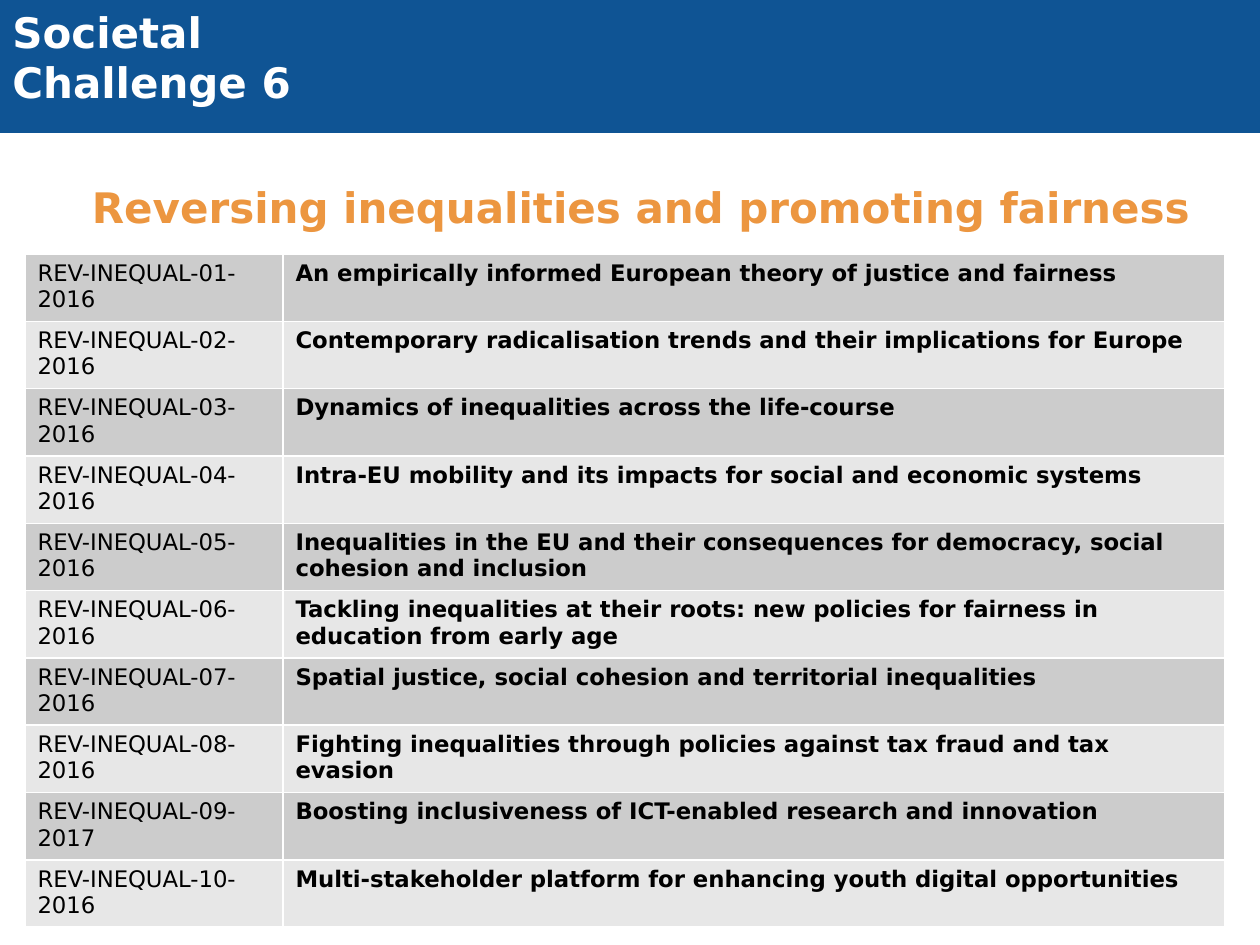
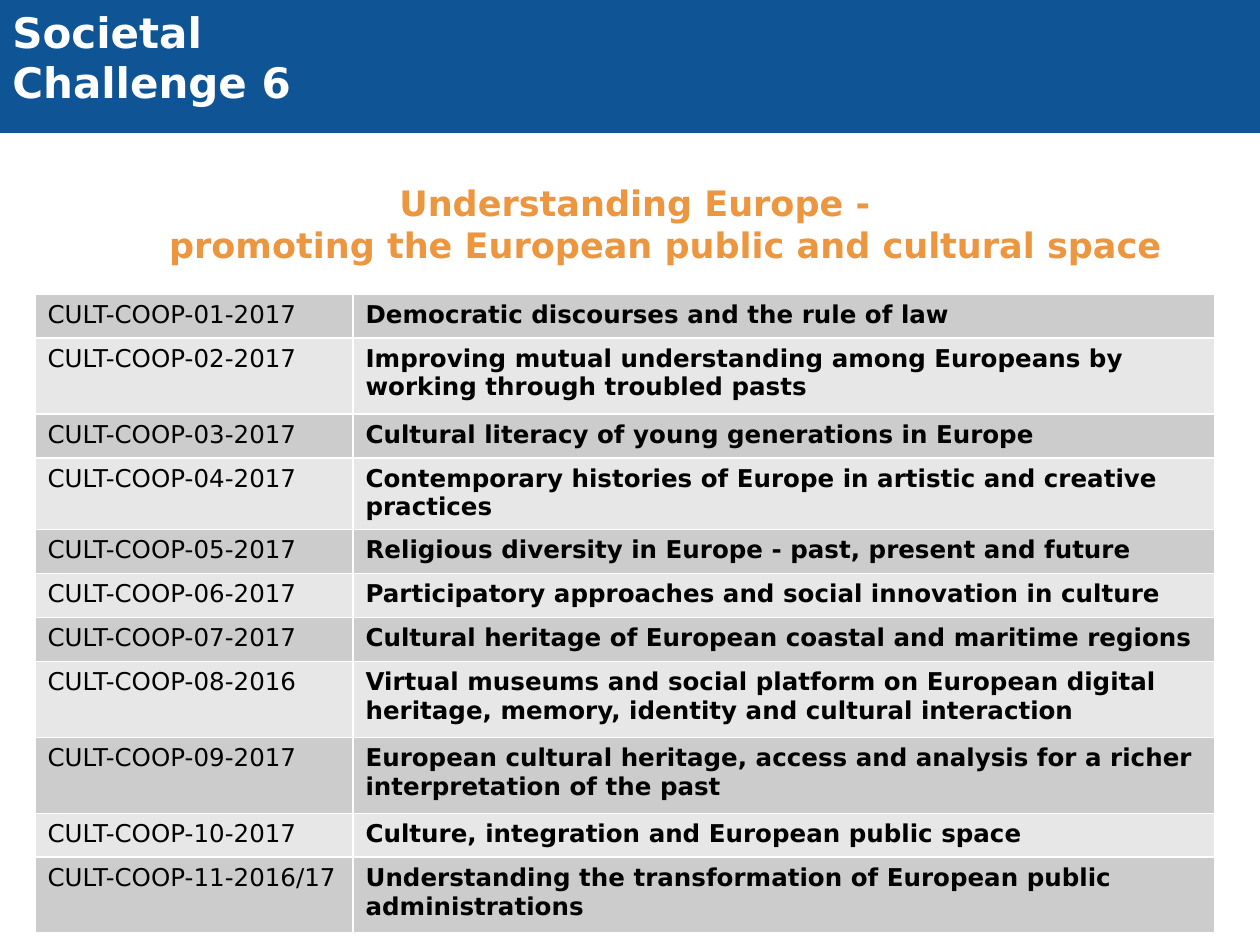
import pptx
import pptx.dml.color
import pptx.enum.shapes
import pptx.enum.text
import pptx.oxml
import pptx.oxml.ns
import pptx.util

RGB = pptx.dml.color.RGBColor
BAND_BLUE = RGB(0x0F, 0x54, 0x94)
TITLE_ORANGE = RGB(0xEC, 0x96, 0x40)
ROW_FILLS = (RGB(0xCC, 0xCC, 0xCC), RGB(0xE7, 0xE7, 0xE7))
WHITE = RGB(0xFF, 0xFF, 0xFF)
BLACK = RGB(0, 0, 0)
FONT = "DejaVu Sans"

# Boxes are left, top, width, height in px, 126 px to the inch
PX_PER_INCH = 126
SLIDE_BOX = (0, 0, 1260, 945)
BAND_BOX = (0, 0, 1260, 132)
LABEL_BOX = (0, 0, 530, 115)
TITLE_BOX = (74, 175, 1134, 128)
HANGING_INDENT = 49

INEQUALITY_TOPICS = [
    ("01-2016", "An empirically informed European theory of justice and fairness"),
    ("02-2016", "Contemporary radicalisation trends and their implications for Europe"),
    ("03-2016", "Dynamics of inequalities across the life-course"),
    ("04-2016", "Intra-EU mobility and its impacts for social and economic systems"),
    ("05-2016", "Inequalities in the EU and their consequences for democracy, social cohesion and inclusion"),
    ("06-2016", "Tackling inequalities at their roots: new policies for fairness in education from early age"),
    ("07-2016", "Spatial justice, social cohesion and territorial inequalities"),
    ("08-2016", "Fighting inequalities through policies against tax fraud and tax evasion"),
    ("09-2017", "Boosting inclusiveness of ICT-enabled research and innovation"),
    ("10-2016", "Multi-stakeholder platform for enhancing youth digital opportunities"),
]
CULTURE_TOPICS = [
    ("01-2017", "Democratic discourses and the rule of law"),
    ("02-2017", "Improving mutual understanding among Europeans by working through troubled pasts"),
    ("03-2017", "Cultural literacy of young generations in Europe"),
    ("04-2017", "Contemporary histories of Europe in artistic and creative practices"),
    ("05-2017", "Religious diversity in Europe - past, present and future"),
    ("06-2017", "Participatory approaches and social innovation in culture"),
    ("07-2017", "Cultural heritage of European coastal and maritime regions"),
    ("08-2016", "Virtual museums and social platform on European digital heritage, memory, identity and cultural interaction"),
    ("09-2017", "European cultural heritage, access and analysis for a richer interpretation of the past"),
    ("10-2017", "Culture, integration and European public space"),
    ("11-2016/17", "Understanding the transformation of European public administrations"),
]
CULTURE_ROW_HEIGHTS = [44, 76, 44, 70, 44, 44, 44, 76, 76, 44, 76]


def px(length):
    return pptx.util.Emu(round(length * pptx.util.Inches(1) / PX_PER_INCH))


def emu_box(box):
    return [px(length) for length in box]


def format_runs(text_frame, size, color, bold):
    for paragraph in text_frame.paragraphs:
        for run in paragraph.runs:
            run.font.name = FONT
            run.font.size = pptx.util.Pt(size)
            run.font.color.rgb = color
            run.font.bold = bold


def add_header(slide):
    # Blue band
    band = slide.shapes.add_shape(
        pptx.enum.shapes.MSO_SHAPE.RECTANGLE, *emu_box(BAND_BOX))
    band.shadow.inherit = False
    band.fill.solid()
    band.fill.fore_color.rgb = BAND_BLUE
    band.line.color.rgb = BAND_BLUE
    band.line.width = pptx.util.Pt(0.75)

    # Programme label
    label = slide.shapes.add_textbox(*emu_box(LABEL_BOX))
    label.text_frame.word_wrap = True
    label.text_frame.auto_size = pptx.enum.text.MSO_AUTO_SIZE.SHAPE_TO_FIT_TEXT
    label.text_frame.text = "Societal\nChallenge 6"
    format_runs(label.text_frame, 24, WHITE, True)


def fill_title(slide, text, size):
    title = slide.shapes.title
    title.left, title.top, title.width, title.height = emu_box(TITLE_BOX)
    text_frame = title.text_frame
    text_frame.text = text
    text_frame.word_wrap = True
    text_frame.auto_size = pptx.enum.text.MSO_AUTO_SIZE.NONE
    text_frame.vertical_anchor = pptx.enum.text.MSO_ANCHOR.TOP
    paragraph = text_frame.paragraphs[0]
    paragraph.alignment = pptx.enum.text.PP_ALIGN.CENTER
    properties = paragraph._p.get_or_add_pPr()
    properties.set("marL", str(px(HANGING_INDENT)))
    properties.set("indent", str(-px(HANGING_INDENT)))
    format_runs(text_frame, size, TITLE_ORANGE, True)


def add_borders(cell):
    properties = cell._tc.get_or_add_tcPr()
    for side in ("lnL", "lnR", "lnT", "lnB"):
        properties.append(pptx.oxml.parse_xml(
            f'<a:{side} {pptx.oxml.ns.nsdecls("a")} w="{pptx.util.Pt(1)}">'
            f'<a:solidFill><a:srgbClr val="{WHITE}"/></a:solidFill></a:{side}>'))


def add_topic_table(slide, left, top, column_widths, row_heights, prefix, topics, size):
    box = (left, top, sum(column_widths), sum(row_heights))
    table = slide.shapes.add_table(
        len(topics), len(column_widths), *emu_box(box)).table
    table.first_row = False
    table.horz_banding = False
    for column, width in zip(table.columns, column_widths):
        column.width = px(width)
    for index, (number, topic) in enumerate(topics):
        table.rows[index].height = px(row_heights[index])
        for column_index, text in enumerate((f"{prefix}-{number}", topic)):
            cell = table.cell(index, column_index)
            add_borders(cell)
            cell.fill.solid()
            cell.fill.fore_color.rgb = ROW_FILLS[index % 2]
            cell.text_frame.text = text
            format_runs(cell.text_frame, size, BLACK, column_index == 1)


def add_topic_slide(presentation, title, title_size, **table_options):
    slide = presentation.slides.add_slide(presentation.slide_layouts[5])
    add_header(slide)
    fill_title(slide, title, title_size)
    add_topic_table(slide, **table_options)


def main():
    presentation = pptx.Presentation()
    presentation.slide_width, presentation.slide_height = emu_box(SLIDE_BOX)[2:]

    add_topic_slide(
        presentation, "Reversing inequalities and promoting fairness", 24,
        left=25, top=254, column_widths=(258, 942),
        row_heights=[65] * len(INEQUALITY_TOPICS),
        prefix="REV-INEQUAL", topics=INEQUALITY_TOPICS, size=13)

    add_topic_slide(
        presentation,
        "Understanding Europe - \vpromoting the European public and cultural space", 20,
        left=35, top=294, column_widths=(318, 862),
        row_heights=CULTURE_ROW_HEIGHTS,
        prefix="CULT-COOP", topics=CULTURE_TOPICS, size=14)

    presentation.save("out.pptx")


if __name__ == "__main__":
    main()
